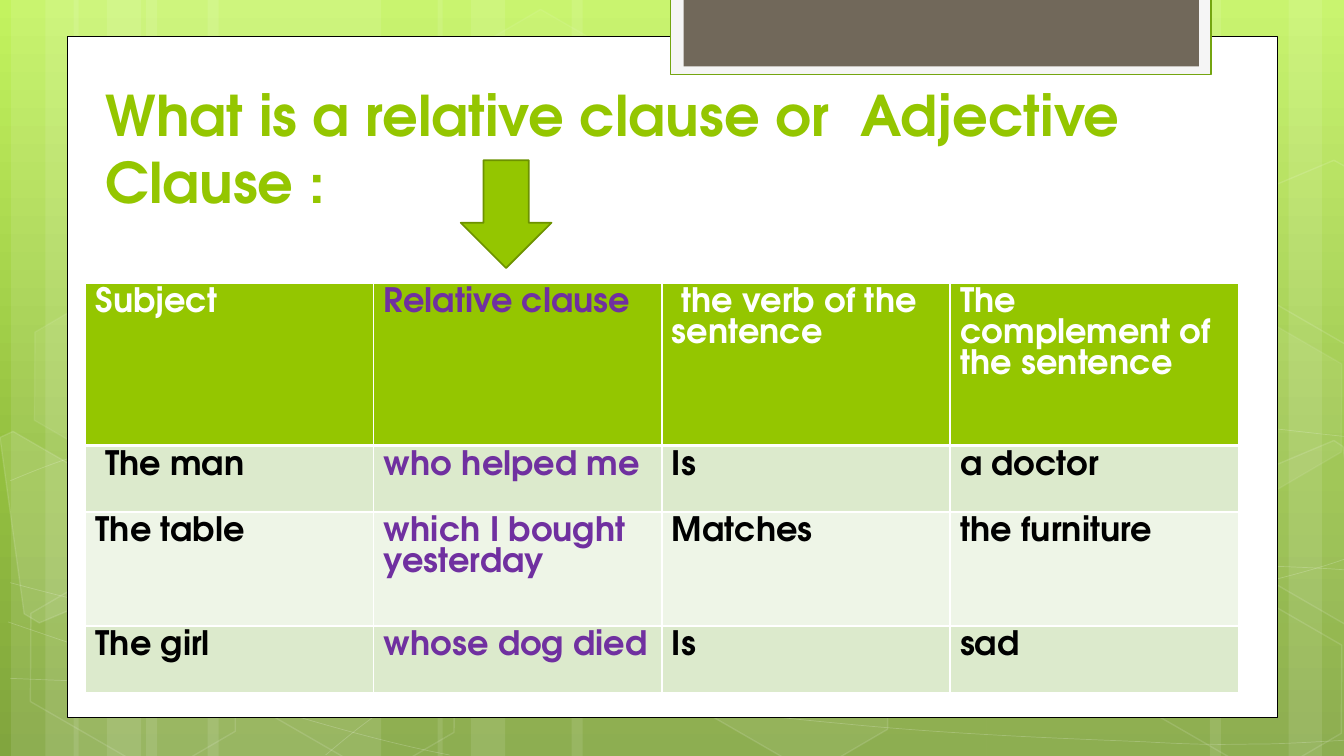
from copy import deepcopy
from typing import NamedTuple, Optional

from lxml import etree
from pptx import Presentation
from pptx.dml.color import RGBColor
from pptx.enum.shapes import MSO_SHAPE
from pptx.oxml.ns import qn
from pptx.util import Inches, Pt

RECT = MSO_SHAPE.RECTANGLE
HEX = MSO_SHAPE.HEXAGON
ARROW = MSO_SHAPE.DOWN_ARROW
FONT = "TeX Gyre Adventor"
COLORS = {
    "white": "FFFFFF", "black": "000000", "green": "94C600", "edge": "6D9200",
    "purple": "7030A0", "frame": "F5F5F5", "rim": "74A510", "brown": "71685A",
    "band": "DCEACC", "pale": "EEF5E7",
    "top": "C3F35F", "mid": "93BF3F", "base": "81A53E",
}


class Look(NamedTuple):
    fill: Optional[str] = None
    line: Optional[str] = None
    width: float = 1
    glass: int = 100  # fill opacity in percent
    trace: int = 100  # line opacity in percent


class Box(NamedTuple):
    left: float
    top: float
    width: float
    height: float
    look: Look
    kind: int = RECT


class Path(NamedTuple):
    points: list
    look: Look
    curved: bool = False  # a start, then three points per cubic curve


def tint(name: str) -> RGBColor:
    return RGBColor.from_string(COLORS[name])


def fade(shape, query: str, share: int) -> None:
    if share < 100:
        for node in shape.element.spPr.xpath(query):
            etree.SubElement(node, qn("a:alpha")).set("val", str(share * 1000))


def paint(shape, look: Look) -> None:
    shape.shadow.inherit = False
    if look.fill:
        shape.fill.solid()
        shape.fill.fore_color.rgb = tint(look.fill)
        fade(shape, "./a:solidFill/a:srgbClr", look.glass)
    else:
        shape.fill.background()
    if look.line:
        shape.line.color.rgb = tint(look.line)
        shape.line.width = Pt(look.width)
        fade(shape, "./a:ln/a:solidFill/a:srgbClr", look.trace)
    else:
        shape.line.fill.background()


def draw_box(slide, box: Box) -> None:
    shape = slide.shapes.add_shape(box.kind, *map(Inches, box[:4]))
    if box.kind == HEX:
        shape.rotation = 30
        shape.adjustments[0], shape.adjustments[1] = 0.285, 1.155
    paint(shape, box.look)


def bend(shape) -> None:
    """Turn each three line steps into one cubic curve."""
    steps = shape.element.spPr.xpath(".//a:lnTo")
    for i in range(0, len(steps), 3):
        curve = etree.Element(qn("a:cubicBezTo"))
        steps[i].addprevious(curve)
        for step in steps[i:i + 3]:
            curve.append(step[0])
            step.getparent().remove(step)


def draw_path(slide, path: Path) -> None:
    spots = [(Inches(x), Inches(y)) for x, y in path.points]
    pen = slide.shapes.build_freeform(*spots[0], scale=1.0)
    pen.add_line_segments(spots[1:], close=not path.curved)
    shape = pen.convert_to_shape()
    if path.curved:
        bend(shape)
    paint(shape, path.look)


def write(frame, text: str, *, size: float, color: str, lead: Optional[float] = None) -> None:
    frame.word_wrap = True
    para = frame.paragraphs[0]
    if lead:
        para.line_spacing = Pt(lead)
    run = para.add_run()
    run.text = text
    run.font.name, run.font.size, run.font.bold = FONT, Pt(size), True
    run.font.color.rgb = tint(color)


def edge(cell, side: str, width: float) -> None:
    line = etree.SubElement(cell._tc.get_or_add_tcPr(), qn("a:ln" + side), w=str(Pt(width)))
    fill = etree.SubElement(line, qn("a:solidFill"))
    etree.SubElement(fill, qn("a:srgbClr"), val=COLORS["white"])


# Backdrop: light bars, thin waves, hexagons
BAR = Look("white", glass=10)
BARS = [(1.45, 2.33), (0.11, 0.67), (0.45, 1.11), (2.06, 2.33), (0.73, 0.67), (1.06, 1.11),
        (9.78, 2.33), (12.78, 0.67), (12, 1.11), (5.67, 4.11), (4.34, 0.67), (4.67, 1.11)]
WAVE = Look(line="white", width=0.5, trace=20)
WAVES = [
    [(0.1, 6.73), (0.82, 6.76), (1.54, 6.79), (2.54, 6.78), (3.54, 6.77), (4.77, 6.75),
     (6.1, 6.65), (7.44, 6.55), (9.33, 6.36), (10.55, 6.17), (11.78, 5.98), (13.03, 5.68),
     (13.43, 5.51)],
    [(0.1, 4.77), (0.48, 4.61), (0.86, 4.46), (1.62, 4.31), (2.38, 4.16), (3.45, 3.94),
     (4.63, 3.87), (5.82, 3.8), (7.25, 3.79), (8.72, 3.87), (10.19, 3.95), (12.63, 4.26),
     (13.43, 4.34)],
    [(0.08, 6.17), (1.69, 6.72), (3.3, 7.27), (4.46, 7.49)],
    [(0.1, 5.78), (0.51, 5.89), (0.93, 6), (1.71, 6.16), (2.48, 6.31), (3.64, 6.56),
     (4.75, 6.73), (5.86, 6.9), (7.27, 7.08), (8.37, 7.18), (9.48, 7.29), (10.66, 7.33),
     (11.37, 7.36), (12.07, 7.4), (12.25, 7.38), (12.6, 7.38), (12.94, 7.37), (13.19, 7.35),
     (13.43, 7.34)],
    [(3.23, 7.49), (3.47, 7.29), (3.7, 7.09), (4.03, 6.91), (4.35, 6.73), (4.8, 6.53),
     (5.17, 6.39), (5.54, 6.25), (5.77, 6.19), (6.26, 6.09), (6.75, 5.99), (7.65, 5.85),
     (8.11, 5.78), (8.58, 5.71), (8.65, 5.71), (9.07, 5.69), (9.48, 5.66), (10.13, 5.63),
     (10.59, 5.62), (11.05, 5.61), (11.82, 5.62), (11.82, 5.62), (12.1, 5.62), (12.4, 5.62),
     (12.7, 5.62), (12.95, 5.63), (13.17, 5.64), (13.29, 5.65), (13.41, 5.66), (13.37, 5.65),
     (13.41, 5.66)],
]
RING = Look(line="white", trace=12)
HAZE = Look("white", "white", glass=7, trace=8)
CELLS = [(4.45, 0.36, HAZE._replace(glass=4)), (6.62, 5.89, RING._replace(fill="white", glass=6)),
         (0.15, 5.91, RING), (0.19, 3.12, HAZE), (2.32, 5.92, RING),
         (11.12, 5.93, RING), (11.12, 3.14, HAZE)]
SHARDS = [
    Path([(0, 4.34), (0.13, 4.28), (1.15, 4.87), (1.27, 5.81), (0.39, 6.18), (0.24, 6.09)],
         RING._replace(fill="white", glass=10)),
    Path([(12.35, 4.74), (13.23, 4.37), (13.32, 4.43), (13.57, 6.25), (13.49, 6.28),
          (12.47, 5.69)], RING._replace(fill="white", glass=4)),
    Path([(12.35, 1.96), (13.23, 1.59), (13.34, 1.65), (13.57, 3.46), (13.49, 3.5),
          (12.47, 2.91)], RING),
]

# Panel, tab and arrow
PANEL = [Box(0.67, 0.36, 12, 6.76, Look("white", "black", 0.5)),
         Box(6.65, -0.02, 5.36, 0.76, Look("frame", "rim", 1.25)),
         Box(6.78, -0.02, 5.11, 0.68, Look("brown"))]
POINTER = Box(4.57, 1.59, 0.9, 1.07, Look("green", "edge", 1.25), ARROW)

# Table
ROWS = [
    ("Subject", "Relative clause", " the verb of the sentence", "The complement of the sentence"),
    (" The man", "who helped me", "Is", "a doctor"),
    ("The table", "which I bought yesterday", "Matches", "the furniture"),
    ("The girl", "whose dog died", "Is", "sad"),
]
TALL = [1.61, 0.66, 1.13, 0.66]
FILLS = ["green", "band", "pale", "band"]
SPAN = 11.43


def draw_sky(slide) -> None:
    fill = slide.background.fill
    fill.gradient()
    fill.gradient_angle = 270
    stops = slide.element.xpath(".//a:gsLst")[0]
    stops.append(deepcopy(stops[0]))
    for stop, (name, spot) in zip(fill.gradient_stops, [("top", 0), ("mid", 0.62), ("base", 1)]):
        stop.color.rgb, stop.position = tint(name), spot


def draw_table(slide) -> None:
    area = map(Inches, (0.85, 2.81, SPAN, sum(TALL)))
    table = slide.shapes.add_table(len(ROWS), len(ROWS[0]), *area).table
    table.horz_banding = False
    for col in table.columns:
        col.width = Inches(SPAN / len(ROWS[0]))
    for r, texts in enumerate(ROWS):
        table.rows[r].height = Inches(TALL[r])
        for c, text in enumerate(texts):
            cell = table.cell(r, c)
            for side in "LRTB":
                edge(cell, side, 3 if (r, side) in ((0, "B"), (1, "T")) else 1)
            cell.fill.solid()
            cell.fill.fore_color.rgb = tint(FILLS[r])
            color = "purple" if c == 1 else "black" if r else "white"
            write(cell.text_frame, text, size=24, color=color, lead=22)


def main() -> None:
    deck = Presentation()
    deck.slide_width, deck.slide_height = Inches(13.33), Inches(7.5)
    slide = deck.slides.add_slide(deck.slide_layouts[6])
    draw_sky(slide)
    for left, width in BARS:
        draw_box(slide, Box(left, 0, width, 7.5, BAR))
    for knots in WAVES:
        draw_path(slide, Path(knots, WAVE, curved=True))
    for left, top, look in CELLS:
        draw_box(slide, Box(left, top, 2.34, 1.52, look, HEX))
    for shard in SHARDS:
        draw_path(slide, shard)
    for box in PANEL:
        draw_box(slide, box)
    title = slide.shapes.add_textbox(*map(Inches, (0.95, 0.75, 10.82, 1.45)))
    write(title.text_frame, "What is a relative clause or  Adjective Clause :", size=40, color="green")
    draw_table(slide)
    draw_box(slide, POINTER)
    deck.save("out.pptx")


if __name__ == "__main__":
    main()
